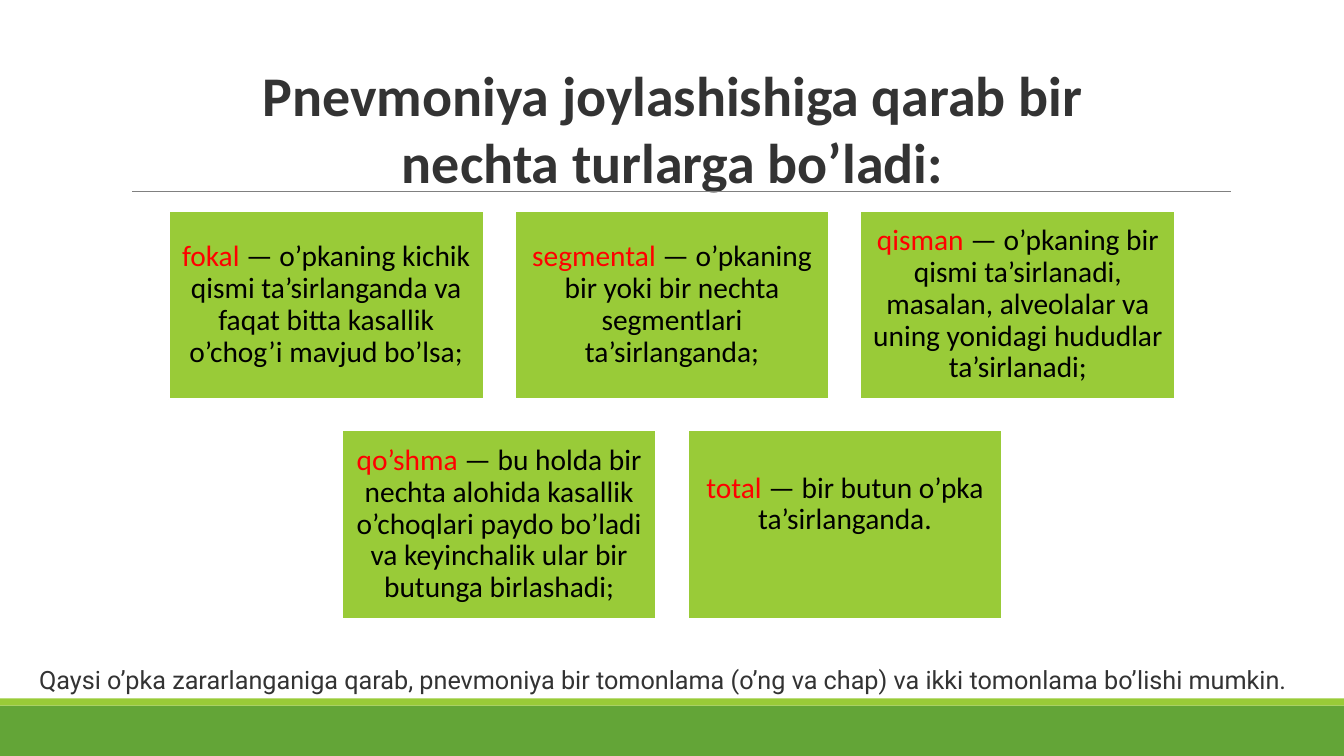
from lxml.etree import SubElement
from pptx import Presentation
from pptx.dml.color import RGBColor
from pptx.enum.shapes import MSO_CONNECTOR, MSO_SHAPE
from pptx.enum.text import MSO_ANCHOR, MSO_AUTO_SIZE, PP_ALIGN
from pptx.oxml.ns import qn
from pptx.util import Inches, Pt

SLIDE_WIDTH, SLIDE_HEIGHT = 13.33, 7.5
CARD_WIDTH, CARD_HEIGHT, CARD_GAP = 3.12, 1.87, 0.31
CARD_INSET = 0.09
GREEN, LIME, DARK, RED = "63A537", "99CB38", "333333", "FF0000"
BLACK, WHITE, GRAY = "000000", "FFFFFF", "808080"

TITLE = "Pnevmoniya joylashishiga qarab bir nechta turlarga bo’ladi:"
FOOTNOTE = ("Qaysi o’pka zararlanganiga qarab, pnevmoniya bir tomonlama "
            "(o’ng va chap) va ikki tomonlama bo’lishi mumkin.")
CARD_ROWS = [
    [("fokal", " — o’pkaning kichik qismi ta’sirlanganda va faqat bitta "
               "kasallik o’chog’i mavjud bo’lsa;", 0),
     ("segmental ", "— o’pkaning bir yoki bir nechta segmentlari ta’sirlanganda;", 0),
     ("qisman", " — o’pkaning bir qismi ta’sirlanadi, masalan, alveolalar va "
                "uning yonidagi hududlar ta’sirlanadi;", 0)],
    [("qo’shma", " — bu holda bir nechta alohida kasallik o’choqlari paydo "
                 "bo’ladi va keyinchalik ular bir butunga birlashadi;", 0),
     ("total ", "— bir butun o’pka ta’sirlanganda.", 0.4)],
]


def color(value):
    """Return the colour for a hex string."""
    return RGBColor.from_string(value)


def add_run(paragraph, text, size, font_color, name="Calibri", bold=False):
    """Append one formatted run to a paragraph."""
    run = paragraph.add_run()
    run.text = text
    run.font.size = Pt(size)
    run.font.name = name
    run.font.bold = bold
    run.font.color.rgb = color(font_color)


def add_rectangle(slide, left, top, width, height, fill, outline=None):
    """Add a flat rectangle, outlined only when a colour is given."""
    shape = slide.shapes.add_shape(MSO_SHAPE.RECTANGLE, Inches(left), Inches(top),
                                   Inches(width), Inches(height))
    shape.shadow.inherit = False
    shape.fill.solid()
    shape.fill.fore_color.rgb = color(fill)
    if outline:
        shape.line.color.rgb = color(outline)
        shape.line.width = Pt(1.25)
    else:
        shape.line.fill.background()
    return shape


def add_base_bands(slide, top, height, stripe_height):
    """Add the green band at the foot and the lime stripe above it."""
    add_rectangle(slide, 0, top, SLIDE_WIDTH, height, GREEN)
    add_rectangle(slide, 0, top - stripe_height, SLIDE_WIDTH, stripe_height, LIME)


def add_title_rule(slide, left, top, width):
    """Add the thin rule under the title."""
    rule = slide.shapes.add_connector(MSO_CONNECTOR.STRAIGHT, Inches(left), Inches(top),
                                      Inches(left + width), Inches(top))
    rule.line.color.rgb = color(GRAY)
    rule.line.width = Pt(0.5)
    SubElement(rule._element.spPr, qn("a:effectLst"))


def add_card(slide, left, top, term, description, lift):
    """Add one card with a red term; lift raises its text block."""
    card = add_rectangle(slide, left, top, CARD_WIDTH, CARD_HEIGHT, LIME, WHITE)
    frame = card.text_frame
    frame.word_wrap = True
    frame.vertical_anchor = MSO_ANCHOR.MIDDLE
    frame.margin_left = frame.margin_right = frame.margin_top = Inches(CARD_INSET)
    frame.margin_bottom = Inches(CARD_INSET + lift)
    paragraph = frame.paragraphs[0]
    paragraph.alignment = PP_ALIGN.CENTER
    paragraph.line_spacing = 0.9
    add_run(paragraph, term, 21, RED)
    add_run(paragraph, description, 21, BLACK)


def add_card_grid(slide, top):
    """Add the rows of cards, each row centred on the slide."""
    for row_index, row in enumerate(CARD_ROWS):
        row_width = len(row) * (CARD_WIDTH + CARD_GAP) - CARD_GAP
        row_left = (SLIDE_WIDTH - row_width) / 2
        row_top = top + row_index * (CARD_HEIGHT + CARD_GAP)
        for column, (term, description, lift) in enumerate(row):
            card_left = row_left + column * (CARD_WIDTH + CARD_GAP)
            add_card(slide, card_left, row_top, term, description, lift)


def fill_title(slide, left, top, width, height):
    """Place and fill the title placeholder."""
    title = slide.shapes.title
    title.left, title.top = Inches(left), Inches(top)
    title.width, title.height = Inches(width), Inches(height)
    frame = title.text_frame
    frame.word_wrap = True
    frame.auto_size = MSO_AUTO_SIZE.NONE
    frame.vertical_anchor = MSO_ANCHOR.TOP
    paragraph = frame.paragraphs[0]
    paragraph.alignment = PP_ALIGN.CENTER
    add_run(paragraph, TITLE, 40, DARK, bold=True)


def add_footnote(slide, left, top, width, height):
    """Add the closing sentence above the bands."""
    box = slide.shapes.add_textbox(Inches(left), Inches(top), Inches(width), Inches(height))
    box.text_frame.word_wrap = True
    add_run(box.text_frame.paragraphs[0], FOOTNOTE, 18, DARK, "Roboto")


def main():
    """Build and save the slide."""
    presentation = Presentation()
    presentation.slide_width = Inches(SLIDE_WIDTH)
    presentation.slide_height = Inches(SLIDE_HEIGHT)
    slide = presentation.slides.add_slide(presentation.slide_layouts.get_by_name("Title Only"))
    add_base_bands(slide, 7, 0.5, 0.07)
    add_title_rule(slide, 1.31, 1.9, 10.9)
    add_card_grid(slide, 2.09)
    fill_title(slide, 1.84, 0.55, 9.66, 1.45)
    add_footnote(slide, 0.29, 6.54, 12.76, 0.4)
    presentation.save("out.pptx")


if __name__ == "__main__":
    main()
